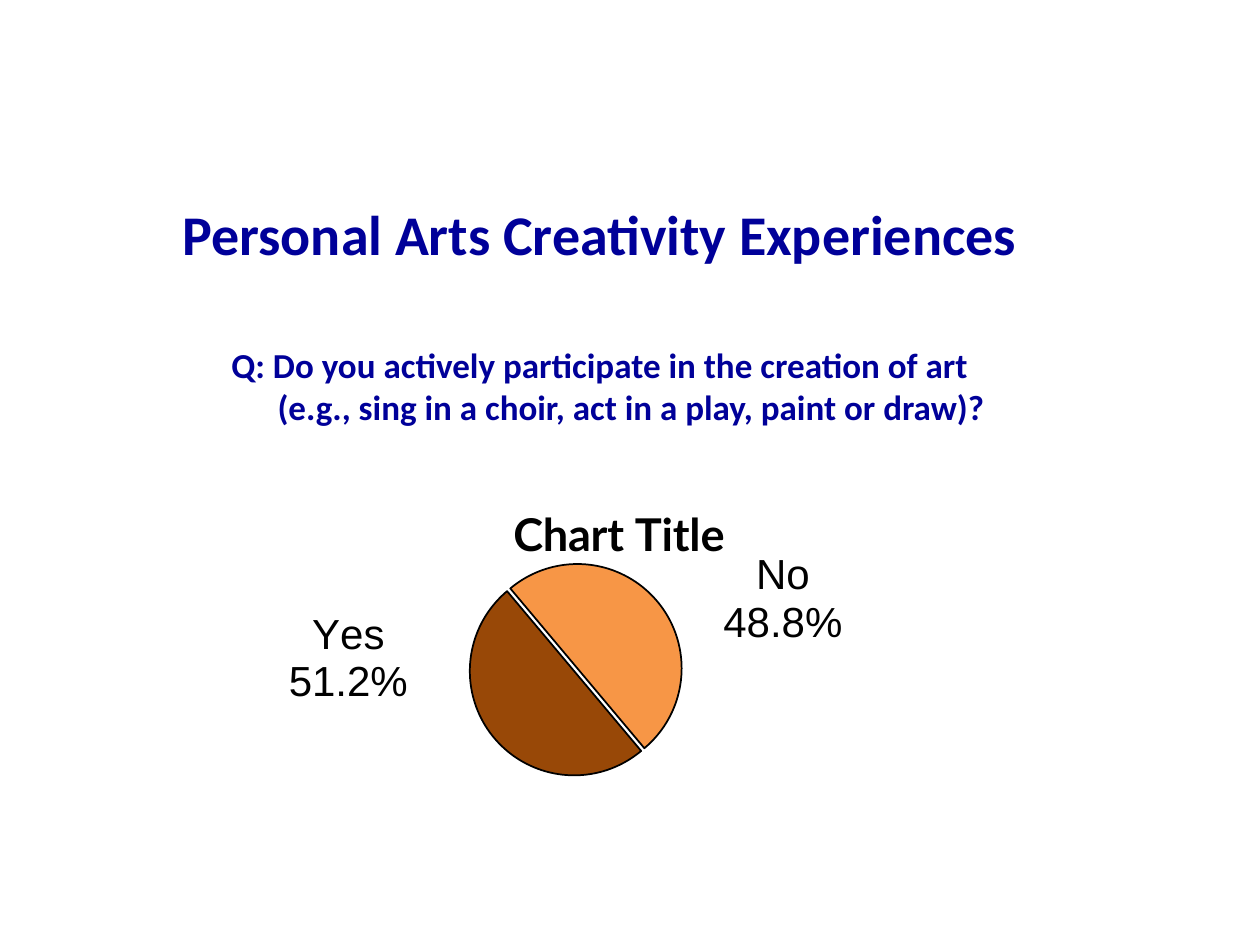
from lxml.etree import SubElement
from pptx import Presentation
from pptx.chart.data import CategoryChartData as ChartData
from pptx.dml.color import RGBColor
from pptx.enum.chart import XL_CHART_TYPE as ChartType, XL_LABEL_POSITION as LabelPos
from pptx.enum.text import MSO_ANCHOR as Anchor, PP_ALIGN as Align
from pptx.oxml import parse_xml
from pptx.oxml.ns import nsdecls, qn
from pptx.util import Inches, Pt

WIDTH, HEIGHT = Inches(10), Inches(7.5)
COLORS = {"heading": "000099", "ink": "000000", "yes": "984807", "no": "F79646"}

HEADING = {"name": "Calibri", "size": Pt(32), "bold": True}
QUESTION = {**HEADING, "size": Pt(20)}
CHART_TITLE = {"name": "Lato", "size": Pt(25.8), "bold": True}
ANSWER = {"name": "Arial", "size": Pt(24), "bold": False}

# answer, share shown, slice value, label shift as shares of the chart
ANSWERS = [
    ("Yes", "51.2%", 50, (-0.08, -0.29)),
    ("No", "48.8%", 50, (0.06, 0.11)),
]


def rgb(key):
    return RGBColor.from_string(COLORS[key])


def style(font, formats, color):
    for attribute, value in formats.items():
        setattr(font, attribute, value)
    font.color.rgb = rgb(color)


def area(left, top, width, height):
    """Turn shares of the slide into lengths."""
    return [int(share * side) for share, side in
            zip((left, top, width, height), (WIDTH, HEIGHT) * 2)]


def set_layout(parent, index, **places):
    """Give a chart part a manual layout, in shares of the chart."""
    for old in parent.findall(qn("c:layout")):
        parent.remove(old)
    layout = parse_xml(f"<c:layout {nsdecls('c')}><c:manualLayout/></c:layout>")
    for tag, value in places.items():
        SubElement(layout[0], qn(f"c:{tag}")).set("val", str(value))
    parent.insert(index, layout)


def add_heading(slide):
    frame = slide.shapes.add_textbox(*area(0, 0.248, 0.952, 0.167)).text_frame
    frame.word_wrap = True
    frame.vertical_anchor = Anchor.MIDDLE
    lines = [
        ("Personal Arts Creativity Experiences", HEADING, 0, 0),
        ("Q: Do you actively participate in the creation of art", QUESTION, 44, 0),
        ("(e.g., sing in a choir, act in a play, paint or draw)?", QUESTION, 0, 0.5),
    ]
    for number, (text, formats, gap, indent) in enumerate(lines):
        line = frame.add_paragraph() if number else frame.paragraphs[0]
        line.alignment = Align.CENTER
        if gap:
            line.space_before = Pt(gap)
        if indent:
            line._p.get_or_add_pPr().set("marL", str(Inches(indent)))
        run = line.add_run()
        run.text = text
        style(run.font, formats, "heading")


def add_answer_label(point, texts):
    label = point.data_label
    frame = label.text_frame
    for number, text in enumerate(texts):
        line = frame.add_paragraph() if number else frame.paragraphs[0]
        run = line.add_run()
        run.text = text
        style(run.font, ANSWER, "ink")
    label.position = LabelPos.OUTSIDE_END


def add_answer_pie(slide):
    data = ChartData()
    data.categories = [str(n + 1) for n in range(len(ANSWERS))]
    data.add_series("Series 1", [value for _, _, value, _ in ANSWERS])
    chart = slide.shapes.add_chart(
        ChartType.PIE, *area(0.089, 0.488, 0.8, 0.48), data).chart
    chart.has_legend = False
    style(chart.font, {"name": "Lato", "size": Pt(21.5), "bold": True}, "ink")

    # Title
    chart.has_title = True
    title = chart.chart_title.text_frame.paragraphs[0].add_run()
    title.text = "Chart Title"
    style(title.font, CHART_TITLE, "ink")

    # Slices and their labels
    plot = chart.plots[0]
    plot.vary_by_categories = True
    series = plot.series[0]
    for number, (answer, share, _, _) in enumerate(ANSWERS):
        point = series.points[number]
        point.format.fill.solid()
        point.format.fill.fore_color.rgb = rgb(answer.lower())
        point.format.line.color.rgb = rgb("ink")
        point.format.line.width = Pt(1)
        add_answer_label(point, (answer, share))

    # Explosion, rotation and places that need XML
    root = chart.element
    for slice_point in root.xpath(".//c:dPt"):
        explosion = parse_xml(f'<c:explosion {nsdecls("c")} val="2"/>')
        slice_point.find(qn("c:spPr")).addprevious(explosion)
    for leader in root.xpath(".//c:showLeaderLines"):
        leader.set("val", "0")
    pie = root.xpath(".//c:pieChart")[0]
    for old in pie.findall(qn("c:firstSliceAng")):
        pie.remove(old)
    SubElement(pie, qn("c:firstSliceAng")).set("val", "140")
    for label, (_, _, _, (x, y)) in zip(root.xpath(".//c:dLbl"), ANSWERS):
        set_layout(label, 1, x=x, y=y)
    set_layout(root.xpath(".//c:title")[0], 1,
               xMode="edge", yMode="edge", x=0.39, y=0.07)
    set_layout(root.xpath(".//c:plotArea")[0], 0, layoutTarget="inner",
               xMode="edge", yMode="edge", x=0.33, y=0.23, w=0.26, h=0.46)


def main():
    deck = Presentation()
    deck.slide_width, deck.slide_height = WIDTH, HEIGHT
    slide = deck.slides.add_slide(deck.slide_layouts[6])
    add_heading(slide)
    add_answer_pie(slide)
    deck.save("out.pptx")


if __name__ == "__main__":
    main()
